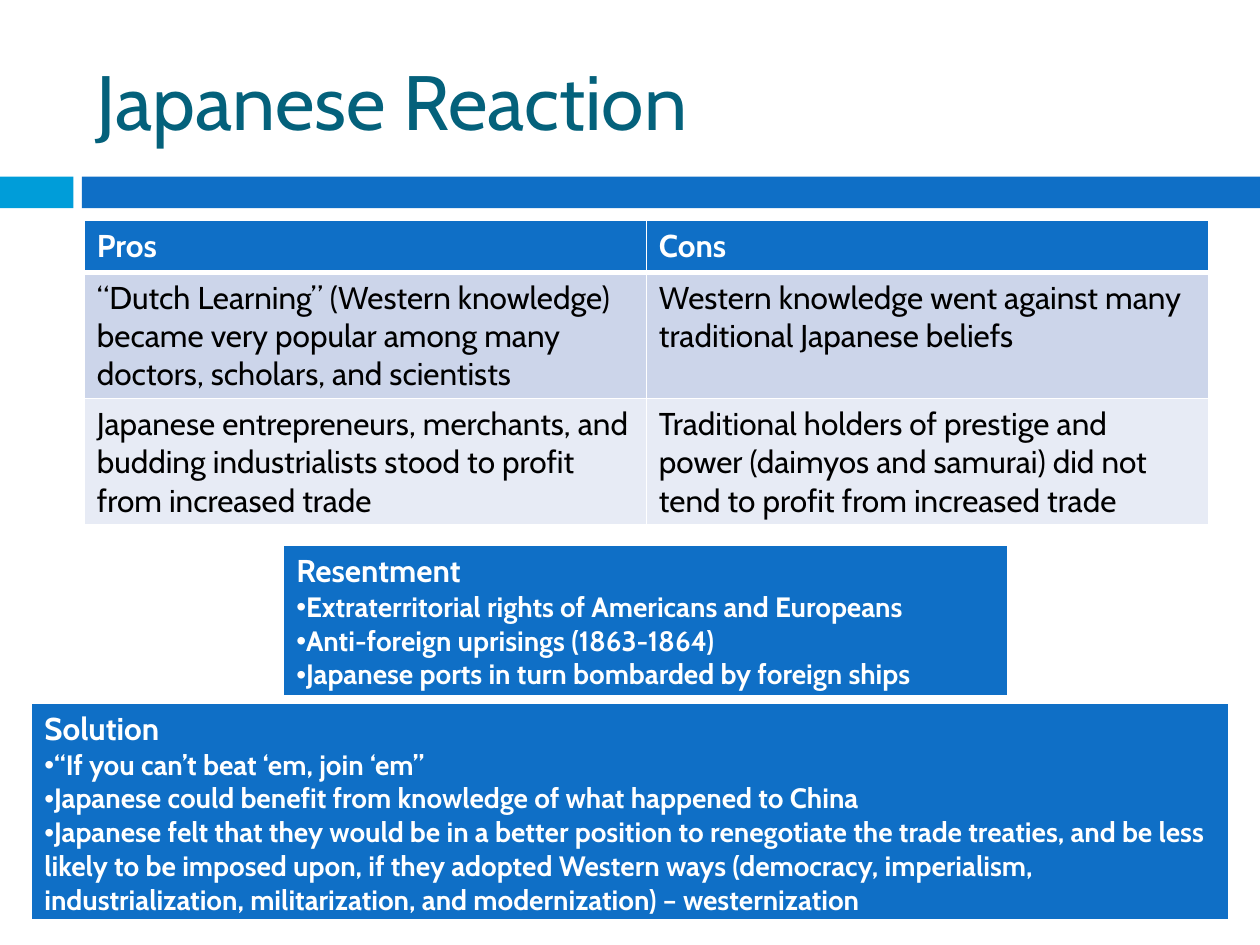
from lxml import etree
from pptx import Presentation
from pptx import util as u
from pptx.dml.color import RGBColor
from pptx.enum import shapes, text
from pptx.oxml.ns import qn

WHITE = RGBColor(0xFF, 0xFF, 0xFF)
BLACK = RGBColor(0, 0, 0)
BLUE = RGBColor(0x0F, 0x6F, 0xC6)
CYAN = RGBColor(0x00, 0x9D, 0xD9)
TEAL = RGBColor(0x04, 0x61, 0x7B)
BAND_DARK = RGBColor(0xCC, 0xD5, 0xEA)
BAND_LIGHT = RGBColor(0xE7, 0xEB, 0xF5)
FONT = "Cabin"

REACTIONS = [
    ("Pros", "Cons"),
    ("“Dutch Learning” (Western knowledge) became very popular among many "
     "doctors, scholars, and scientists",
     "Western knowledge went against many traditional Japanese beliefs"),
    ("Japanese entrepreneurs, merchants, and budding industrialists stood to "
     "profit from increased trade",
     "Traditional holders of prestige and power (daimyos and samurai) did not "
     "tend to profit from increased trade"),
]
RESENTMENT = [
    "Extraterritorial rights of Americans and Europeans",
    "Anti-foreign uprisings (1863-1864)",
    "Japanese ports in turn bombarded by foreign ships",
]
SOLUTION = [
    "“If you can’t beat ‘em, join ‘em”",
    "Japanese could benefit from knowledge of what happened to China",
    "Japanese felt that they would be in a better position to renegotiate the "
    "trade treaties, and be less likely to be imposed upon, if they adopted "
    "Western ways (democracy, imperialism, industrialization, militarization, "
    "and modernization) – westernization",
]


def write(paragraph, words, size=18, color=WHITE, bold=False, bullet=False):
    run = paragraph.add_run()
    run.text = words
    run.font.name = FONT
    run.font.size = u.Pt(size)
    run.font.bold = bold
    run.font.color.rgb = color
    if bullet:
        properties = paragraph._p.get_or_add_pPr()
        properties.set("marL", "0")
        properties.set("indent", "0")
        etree.SubElement(properties, qn("a:buFont"), typeface="Arial")
        etree.SubElement(properties, qn("a:buChar"), char="•")


def add_bar(slide, left, width, color):
    bar = slide.shapes.add_shape(shapes.MSO_SHAPE.RECTANGLE, u.Cm(left),
                                 u.Cm(3.56), u.Cm(width), u.Cm(0.64))
    bar.shadow.inherit = False
    bar.fill.solid()
    bar.fill.fore_color.rgb = color
    bar.line.fill.background()


def add_title(slide, words):
    title = slide.shapes.add_textbox(u.Cm(1.7), u.Cm(0.64), u.Cm(22.66), u.Cm(2.74))
    frame = title.text_frame
    frame.word_wrap = True
    frame.vertical_anchor = text.MSO_ANCHOR.MIDDLE
    write(frame.paragraphs[0], words, size=44, color=TEAL)


def style_cell(cell, color, bottom=1):
    properties = cell._tc.get_or_add_tcPr()
    for side, points in (("L", 1), ("R", 1), ("T", 1), ("B", bottom)):
        border = etree.SubElement(properties, qn(f"a:ln{side}"), w=str(u.Pt(points)))
        paint = etree.SubElement(border, qn("a:solidFill"))
        etree.SubElement(paint, qn("a:srgbClr"), val=str(WHITE))
    cell.fill.solid()
    cell.fill.fore_color.rgb = color


def add_grid(slide, left, top, width, heights, columns):
    grid = slide.shapes.add_table(len(heights), columns, u.Cm(left), u.Cm(top),
                                  u.Cm(width), u.Cm(sum(heights))).table
    for row, height in zip(grid.rows, heights):
        row.height = u.Cm(height)
    return grid


def add_reactions(slide):
    grid = add_grid(slide, 1.7, 4.45, 22.66, [1.04, 2.54, 2.54], columns=2)
    fills = [BLUE, BAND_DARK, BAND_LIGHT]
    for r, (entries, color) in enumerate(zip(REACTIONS, fills)):
        header = r == 0
        for c, words in enumerate(entries):
            cell = grid.cell(r, c)
            style_cell(cell, color, bottom=3 if header else 1)
            write(cell.text_frame.paragraphs[0], words, bold=header,
                  color=WHITE if header else BLACK)


def add_panel(slide, left, top, width, height, heading, points):
    cell = add_grid(slide, left, top, width, [height], columns=1).cell(0, 0)
    style_cell(cell, BLUE, bottom=3)
    frame = cell.text_frame
    write(frame.paragraphs[0], heading, bold=True)
    for point in points:
        write(frame.add_paragraph(), point, size=16, bold=True, bullet=True)


def main():
    deck = Presentation()
    deck.slide_width, deck.slide_height = u.Cm(25.4), u.Cm(19.05)
    slide = deck.slides.add_slide(deck.slide_layouts[6])
    add_bar(slide, 0, 1.48, CYAN)
    add_bar(slide, 1.65, 23.75, BLUE)
    add_title(slide, "Japanese Reaction")
    add_reactions(slide)
    add_panel(slide, 5.72, 11, 14.6, 3.04, "Resentment", RESENTMENT)
    add_panel(slide, 0.64, 14.18, 24.13, 4.39, "Solution", SOLUTION)
    deck.save("out.pptx")


if __name__ == "__main__":
    main()
